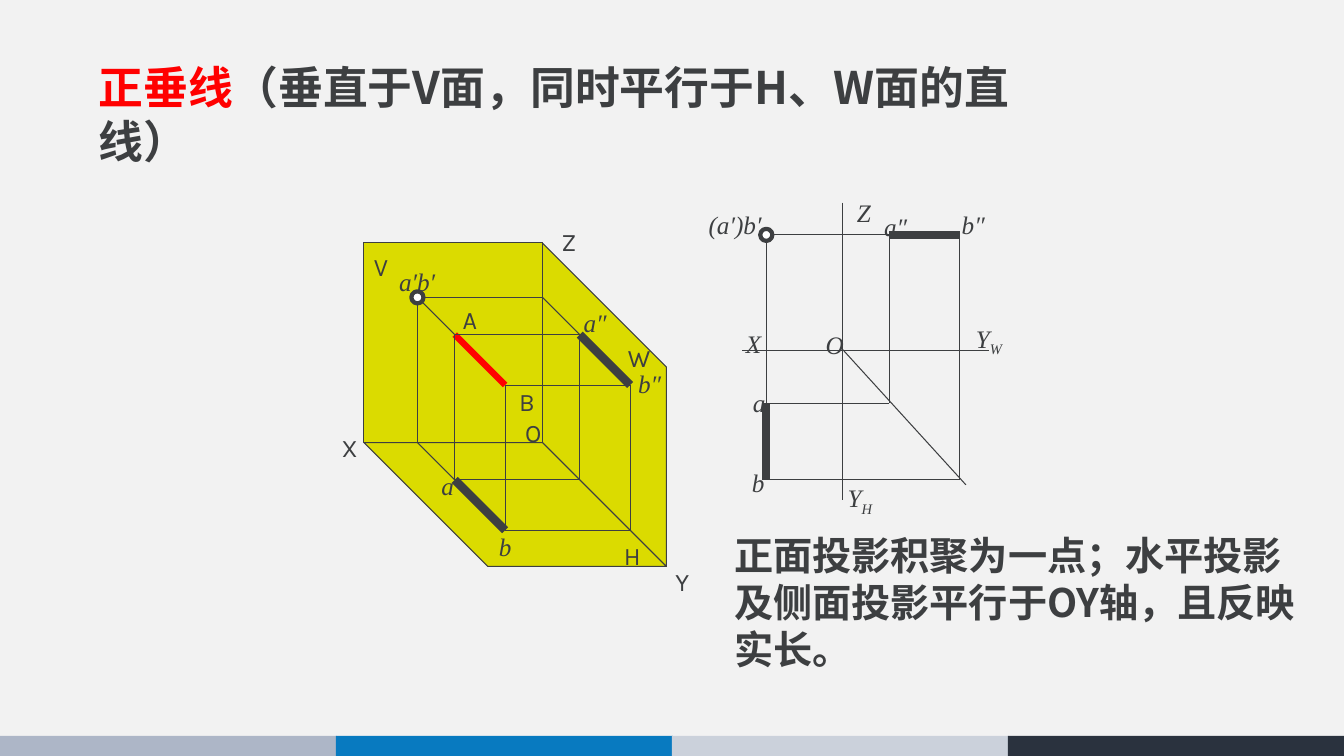
from pptx import Presentation
from pptx.dml.color import RGBColor
from pptx.enum.shapes import MSO_CONNECTOR, MSO_SHAPE as SHAPE
from pptx.enum.text import MSO_ANCHOR, MSO_AUTO_SIZE, PP_ALIGN
from pptx.oxml.ns import qn
from pptx.util import Pt
from lxml.etree import SubElement

PX = 9144  # 100 px to the inch
COLORS = {
    "background": "F2F2F2", "ink": "3D3F41", "accent": "FF0000",
    "plane": "DBDB00", "white": "FFFFFF",
    "band1": "ADB6C7", "band2": "087AC0", "band3": "CBD1DB", "band4": "2A323E",
}
SANS, SERIF, CJK = "Karla", "Times New Roman", "Noto Sans CJK SC"
THIN, RING, THICK = 0.75, 3, 6


def rgb(name):
    return RGBColor.from_string(COLORS[name])


def px(*lengths):
    return [round(length * PX) for length in lengths]


def write(paragraph, text, size=18, color="ink", font=SERIF, bold=False,
          italic=False, baseline=0):
    run = paragraph.add_run()
    run.text = text
    run.font.size, run.font.bold, run.font.italic = Pt(size), bold, italic
    run.font.name = font
    run.font.color.rgb = rgb(color)
    properties = run.font._element
    if baseline:
        properties.set("baseline", str(baseline * 1000))
    SubElement(properties, qn("a:ea")).set("typeface", CJK)


def label(slide, x, y, text, subscript="", **style):
    """Put a one-line label with its box corner at x, y."""
    box = slide.shapes.add_textbox(*px(x, y, 100, 40))
    box.text_frame.word_wrap = True
    paragraph = box.text_frame.paragraphs[0]
    write(paragraph, text, **style)
    if subscript:
        write(paragraph, subscript, baseline=-25, **style)


def line(slide, start, end, width=THIN, color="ink"):
    connector = slide.shapes.add_connector(MSO_CONNECTOR.STRAIGHT, *px(*start, *end))
    connector.line.width = Pt(width)
    connector.line.color.rgb = rgb(color)
    SubElement(connector._element.spPr, qn("a:effectLst"))


def shape(slide, kind, box, fill, width=0):
    part = slide.shapes.add_shape(kind, *px(*box))
    part.shadow.inherit = False
    part.fill.solid()
    part.fill.fore_color.rgb = rgb(fill)
    if width:
        part.line.width = Pt(width)
        part.line.color.rgb = rgb("ink")
    else:
        part.line.fill.background()
    return part


def ring(slide, center):
    x, y = center
    shape(slide, SHAPE.OVAL, (x - 6, y - 6, 12, 12), "white", RING)


def fill_placeholder(holder, box, size, runs):
    """Place a title or body and write its (text, style) runs without a bullet."""
    holder.left, holder.top, holder.width, holder.height = px(*box)
    frame = holder.text_frame
    frame.auto_size = MSO_AUTO_SIZE.NONE
    frame.word_wrap = True
    frame.vertical_anchor = MSO_ANCHOR.TOP
    frame.margin_top = 9 * PX
    paragraph = frame.paragraphs[0]
    paragraph.alignment = PP_ALIGN.LEFT
    paragraph.line_spacing = Pt(size * 1.2)
    paragraph.space_before = Pt(0)
    properties = paragraph._p.get_or_add_pPr()
    properties.set("marL", "0")
    properties.set("indent", "0")
    SubElement(properties, qn("a:buNone"))
    for text, style in runs:
        write(paragraph, text, size=size, bold=True, **style)


def footer_band(slide, left, top, width, height):
    step = width / 4
    for i in range(4):
        shape(slide, SHAPE.RECTANGLE, (left + i * step, top, step + 1, height),
              f"band{i + 1}")


def pictorial_view(slide, left, top):
    """Oblique view of line AB inside the planes V, H and W."""
    ox, oy = left + 209, top + 219
    x_axis, y_axis, z_axis = 177, 123, 198
    x, z, y_a, y_b = 124, 144, 37, 87

    def at(x, y, z):
        return ox - x + y, oy - z + y

    # The rotated box shares its centre with the W plane.
    w_length = z_axis + y_axis
    w_plane = shape(slide, SHAPE.PARALLELOGRAM,
                    (ox + (y_axis - w_length) / 2, oy - (z_axis - y_axis + y_axis) / 2,
                     w_length, y_axis), "plane", THIN)
    w_plane.rotation = 270
    w_plane.top = px(oy + (y_axis - z_axis) / 2 - y_axis / 2)[0]
    h_plane = shape(slide, SHAPE.PARALLELOGRAM,
                    (ox - x_axis, oy, x_axis + y_axis, y_axis), "plane", THIN)
    h_plane._element.spPr.xfrm.set("flipH", "1")
    for plane in (w_plane, h_plane):
        plane.adjustments[0] = 1
    shape(slide, SHAPE.RECTANGLE, (ox - x_axis, oy - z_axis, x_axis, z_axis),
          "plane", THIN)

    line(slide, at(x, y_a, z), at(x, y_b, z), 4.5, "accent")
    for text, dx, dy in [
        ("V", -177, -195), ("W", 75, -104), ("H", 71, 92), ("X", -209, -15),
        ("Y", 122, 118), ("Z", 9, -219), ("O", -27, -30), ("A", -89, -142),
        ("B", -33, -61),
    ]:
        label(slide, ox + dx, oy + dy, text, font=SANS)
    for text, dx, dy in [
        ("a′b′", -152, -180), ("a″", 31, -139), ("b″", 85, -78),
        ("a", -110, 23), ("b", -53, 83),
    ]:
        label(slide, ox + dx, oy + dy, text, italic=True)

    for y in (0, y_a, y_b):
        line(slide, at(x, y, z), at(0, y, z))
        line(slide, at(x, y, z), at(x, y, 0))
    for y in (y_a, y_b):
        line(slide, at(0, y, z), at(0, y, 0))
        line(slide, at(x, y, 0), at(0, y, 0))
    for foot_x, foot_z in ((x, z), (x, 0), (0, z)):
        line(slide, at(foot_x, 0, foot_z), at(foot_x, y_a, foot_z))
    line(slide, at(0, y_a, z), at(0, y_b, z), THICK)
    line(slide, at(x, y_a, 0), at(x, y_b, 0), THICK)
    ring(slide, at(x, 0, z))


def three_view_drawing(slide, left, top):
    """Unfolded projections of line AB around the axes through O."""
    ox, oy = left + 143, top + 157
    x, upper = ox - 76, oy - 115
    a_w, b_w = ox + 46, ox + 116
    a_h, b_h = oy + 52, oy + 128

    for text, subscript, dx, dy in [
        ("Z", "", 4, -157), ("X", "", -106, -27), ("(a′)b′", "", -143, -145),
        ("b″", "", 108, -145), ("a″", "", 31, -143), ("a", "", -99, 31),
        ("b", "", -100, 111), ("O", "", -27, -26), ("Y", "H", -5, 126),
        ("Y", "W", 122, -32),
    ]:
        label(slide, ox + dx, oy + dy, text, subscript, italic=True)

    for start, end in [
        ((ox - 100, oy), (ox + 145, oy)),
        ((ox, oy - 147), (ox, oy + 148)),
        ((ox, oy - 1), (ox + 122, oy + 133)),
        ((x, upper), (a_w, upper)),
        ((x, upper), (x, a_h)),
        ((x, a_h), (a_w, a_h)),
        ((a_w, a_h), (a_w, upper)),
        ((x, b_h), (b_w, b_h)),
        ((b_w, b_h), (b_w, upper)),
    ]:
        line(slide, start, end)
    line(slide, (a_w, upper), (b_w, upper), THICK)
    line(slide, (x, a_h), (x, b_h), THICK)
    ring(slide, (x, upper))


def main():
    deck = Presentation()
    deck.slide_width, deck.slide_height = px(1333, 750)
    slide = deck.slides.add_slide(deck.slide_layouts[1])
    slide.background.fill.solid()
    slide.background.fill.fore_color.rgb = rgb("background")

    footer_band(slide, 0, 730, 1333, 20)
    fill_placeholder(slide.shapes.title, (88, 50, 981, 118), 32, [
        ("正垂线", {"color": "accent", "font": SANS}),
        ("（垂直于V面，同时平行于H、W面的直线）", {"font": CJK}),
    ])
    pictorial_view(slide, 329, 220)
    three_view_drawing(slide, 693, 191)
    fill_placeholder(slide.placeholders[1], (718, 518, 598, 151), 28, [
        ("正面投影积聚为一点；水平投影及侧面投影平行于OY轴，且反映实长。", {"font": CJK}),
    ])
    deck.save("out.pptx")


if __name__ == "__main__":
    main()
